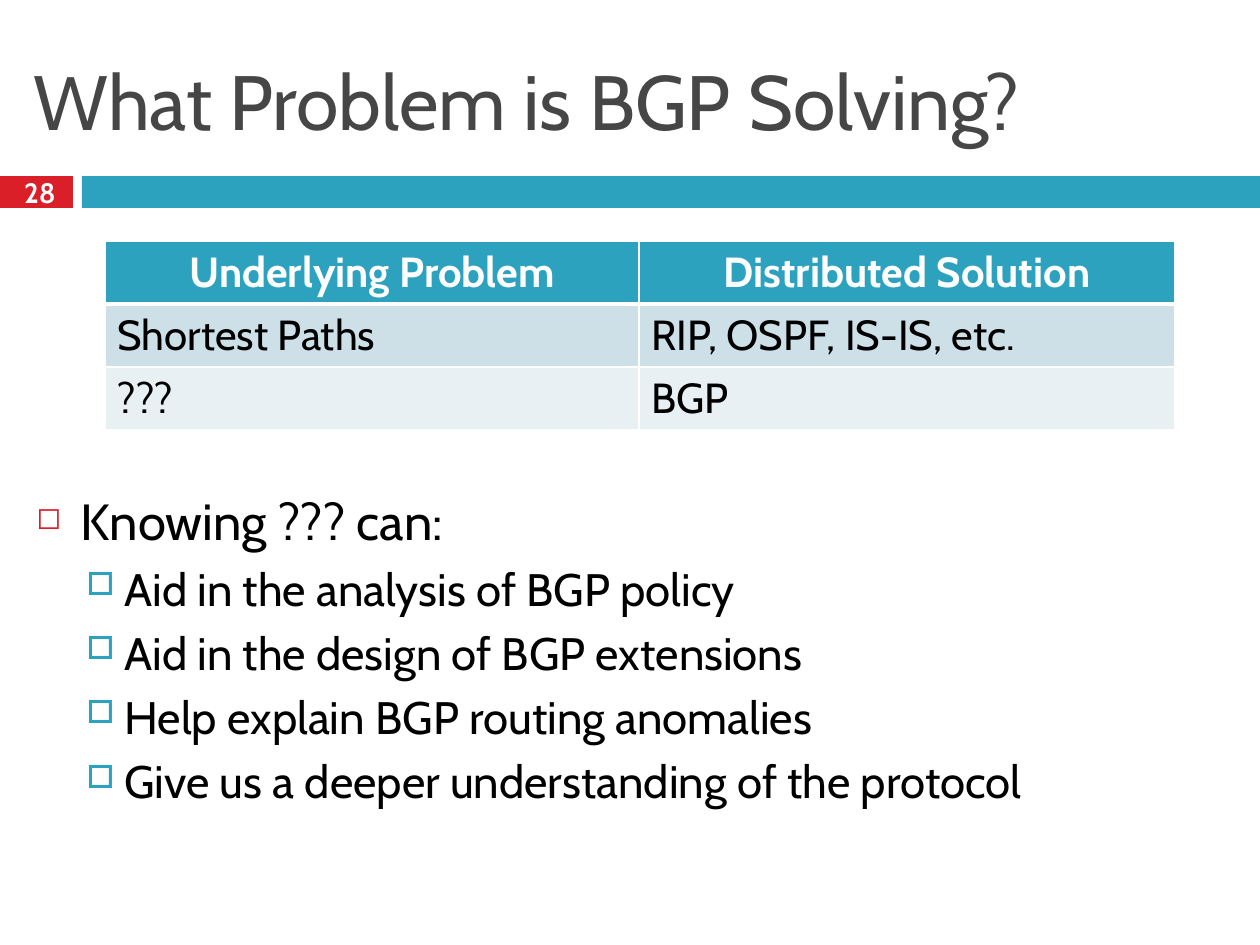
"""Build the slide asking which problem BGP solves."""
import dataclasses
import typing

import lxml.etree
import pptx
import pptx.dml.color
import pptx.enum.shapes
import pptx.enum.text
import pptx.oxml.ns
import pptx.util

PX = 914400 / 126
COLOURS = {
    "red": "DA1F28", "teal": "2DA2BF", "grey": "464646", "white": "FFFFFF",
    "black": "000000", "band_dark": "CDE0E8", "band_light": "E8F0F4",
}
ALIGN = pptx.enum.text.PP_ALIGN
ANCHOR = pptx.enum.text.MSO_ANCHOR


@dataclasses.dataclass(frozen=True)
class Area:
    """Place and size in px."""
    left: int
    top: int
    width: int
    height: int

    def emu(self) -> list[int]:
        """Return the four lengths in EMU."""
        return [emu(length) for length in dataclasses.astuple(self)]


@dataclasses.dataclass(frozen=True)
class Style:
    """Look of a text span."""
    size: int
    colour: str
    bold: bool = False
    align: typing.Any = ALIGN.LEFT


@dataclasses.dataclass(frozen=True)
class Level:
    """Look of one bullet level."""
    style: Style
    margin: int
    hanging: int
    before: float
    symbol: str
    colour: str
    percent: int


@dataclasses.dataclass(frozen=True)
class Row:
    """Content and look of a table row."""
    texts: tuple[str, ...]
    fill: str
    style: Style
    top_line: int
    bottom_line: int


BARS = ((Area(0, 176, 73, 32), "red"), (Area(82, 176, 1178, 32), "teal"))
LABELS = (
    (Area(21, 32, 1218, 136), "What Problem is BGP Solving?", Style(44, "grey")),
    (Area(-1, 174, 82, 37), "28", Style(16, "white", True, ALIGN.CENTER)),
)
HEADER = Style(24, "white", True, ALIGN.CENTER)
BODY = Style(24, "black")
ROWS = (
    Row(("Underlying Problem", "Distributed Solution"), "teal", HEADER, 1, 3),
    Row(("Shortest Paths", "RIP, OSPF, IS-IS, etc."), "band_dark", BODY, 3, 1),
    Row(("???", "BGP"), "band_light", BODY, 1, 1),
)
COLUMNS = (534, 536)
ROW_HEIGHT = 63
MAIN = Level(Style(29, "black"), 44, 44, 7, "◻", "red", 60)
SUB = Level(Style(26, "black"), 88, 38, 5.5, "□", "teal", 70)
POINTS = (
    (MAIN, "Knowing ??? can:"),
    (SUB, "Aid in the analysis of BGP policy"),
    (SUB, "Aid in the design of BGP extensions"),
    (SUB, "Help explain BGP routing anomalies"),
    (SUB, "Give us a deeper understanding of the protocol"),
)


def emu(length: int) -> int:
    """Turn px into EMU."""
    return round(length * PX)


def rgb(name: str) -> pptx.dml.color.RGBColor:
    """Look up a named colour."""
    return pptx.dml.color.RGBColor.from_string(COLOURS[name])


def add_child(parent, tag: str, **attributes: str):
    """Append a drawing element and return it."""
    return lxml.etree.SubElement(parent, pptx.oxml.ns.qn(tag), attributes)


def paint(target, colour: str) -> None:
    """Give a shape or cell a solid fill."""
    target.fill.solid()
    target.fill.fore_color.rgb = rgb(colour)


def write(para, text: str, style: Style) -> None:
    """Write one styled span into a paragraph."""
    para.alignment = style.align
    span = para.add_run()
    span.text = text
    values = {"name": "Cabin", "size": pptx.util.Pt(style.size), "bold": style.bold}
    for name, value in values.items():
        setattr(span.font, name, value)
    span.font.color.rgb = rgb(style.colour)


def add_bar(page, area: Area, colour: str) -> None:
    """Draw a plain coloured bar."""
    bar = page.shapes.add_shape(pptx.enum.shapes.MSO_SHAPE.RECTANGLE, *area.emu())
    bar.shadow.inherit = False
    bar.line.fill.background()
    paint(bar, colour)


def add_box(page, area: Area, anchor):
    """Add a wrapping text box and return its text frame."""
    frame = page.shapes.add_textbox(*area.emu()).text_frame
    for name, value in {"word_wrap": True, "vertical_anchor": anchor}.items():
        setattr(frame, name, value)
    return frame


def set_borders(cell, row: Row) -> None:
    """Draw white borders around a cell."""
    properties = cell._tc.get_or_add_tcPr()
    widths = {"L": 1, "R": 1, "T": row.top_line, "B": row.bottom_line}
    for side, width in widths.items():
        line = add_child(properties, f"a:ln{side}", w=str(pptx.util.Pt(width)))
        add_child(add_child(line, "a:solidFill"), "a:srgbClr", val=COLOURS["white"])


def add_table(page, left: int, top: int) -> None:
    """Draw the table of problems and solutions."""
    area = Area(left, top, sum(COLUMNS), ROW_HEIGHT * len(ROWS))
    table = page.shapes.add_table(len(ROWS), len(COLUMNS), *area.emu()).table
    for column, width in zip(table.columns, COLUMNS):
        column.width = emu(width)
    for row_index, row in enumerate(ROWS):
        for column_index, text in enumerate(row.texts):
            cell = table.cell(row_index, column_index)
            set_borders(cell, row)
            paint(cell, row.fill)
            write(cell.text_frame.paragraphs[0], text, row.style)


def add_points(page, area: Area) -> None:
    """Write the bulleted list."""
    frame = add_box(page, area, ANCHOR.TOP)
    for index, (level, text) in enumerate(POINTS):
        para = frame.add_paragraph() if index else frame.paragraphs[0]
        write(para, text, level.style)
        para.level = int(level is SUB)
        para.space_before = pptx.util.Pt(level.before)
        properties = para._p.get_or_add_pPr()
        properties.set("marL", str(emu(level.margin)))
        properties.set("indent", str(-emu(level.hanging)))
        bullet_colour = add_child(properties, "a:buClr")
        add_child(bullet_colour, "a:srgbClr", val=COLOURS[level.colour])
        add_child(properties, "a:buSzPct", val=str(level.percent * 1000))
        add_child(properties, "a:buChar", char=level.symbol)


def main() -> None:
    """Build and save the deck."""
    deck = pptx.Presentation()
    deck.slide_width, deck.slide_height = emu(1260), emu(945)
    page = deck.slides.add_slide(deck.slide_layouts[6])
    for area, colour in BARS:
        add_bar(page, area, colour)
    for area, text, style in LABELS:
        write(add_box(page, area, ANCHOR.MIDDLE).paragraphs[0], text, style)
    add_table(page, 105, 241)
    add_points(page, Area(24, 484, 1218, 399))
    deck.save("out.pptx")


if __name__ == "__main__":
    main()
